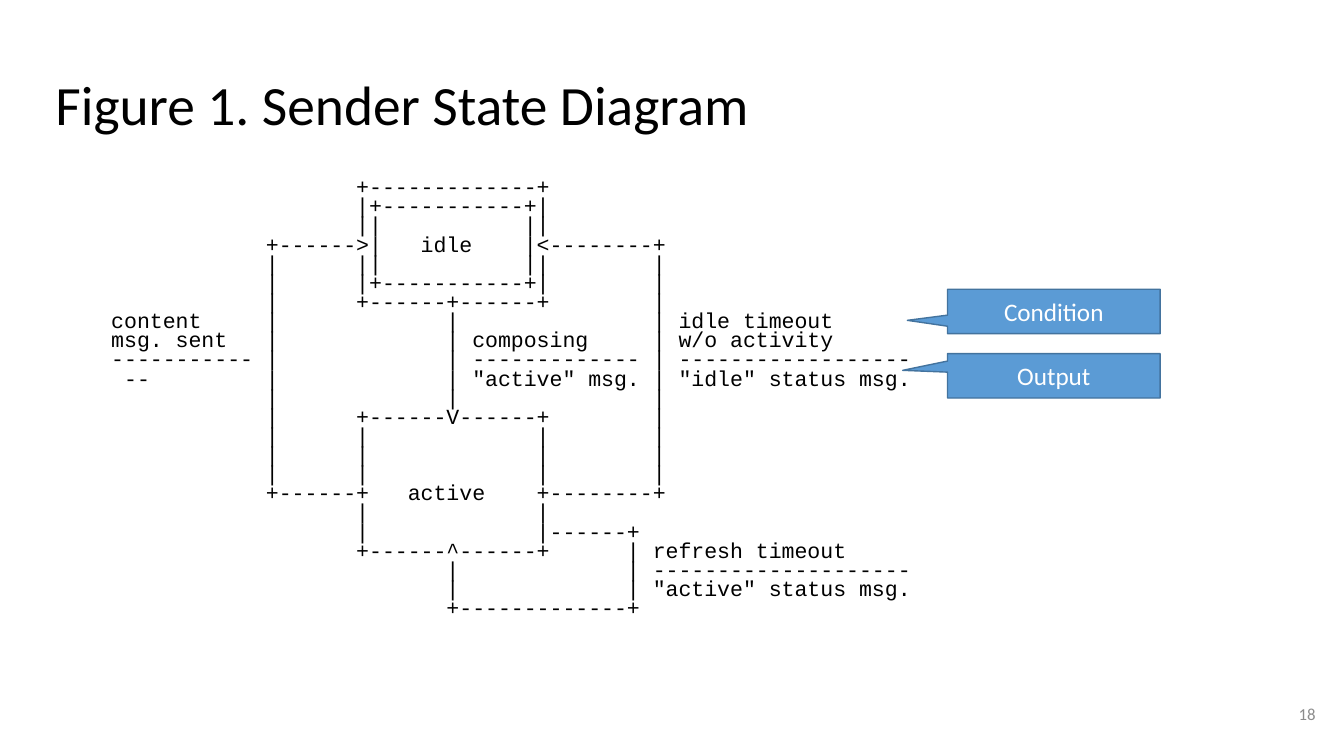
import pptx
import pptx.util
import pptx.oxml
import pptx.dml.color
import pptx.enum.shapes
import pptx.enum.text

Pt = pptx.util.Pt
ALIGN = pptx.enum.text.PP_ALIGN
ANCHOR = pptx.enum.text.MSO_ANCHOR

IDLE_STATE = """\
                      +-------------+
                      |+-----------+|
                      ||           ||
               +------>|   idle    |<--------+
               |      ||           ||        |
               |      |+-----------+|        |
               |      +------+------+        |"""

TRANSITIONS = """\
   content     |             |               | idle timeout
   msg. sent   |             | composing     | w/o activity
   ----------- |             | ------------- | ------------------
    --         |             | "active" msg. | "idle" status msg.
               |             |               |"""

ACTIVE_STATE = """\
               |      +------V------+        |
               |      |             |        |
               |      |             |        |
               |      |             |        |
               +------+   active    +--------+
                      |             |
                      |             |------+
                      +------^------+      | refresh timeout
                             |             | --------------------
                             |             | "active" status msg.
                             +-------------+"""


def colour(code):
    return pptx.dml.color.RGBColor.from_string(code)


def place(shape, box):
    shape.left, shape.top, shape.width, shape.height = [Pt(length) for length in box]


def write(shape, text, font, size, code, align, anchor, spacing=1.0):
    frame = shape.text_frame
    frame.text = text
    frame.word_wrap = True
    frame.auto_size = pptx.enum.text.MSO_AUTO_SIZE.NONE
    frame.vertical_anchor = anchor
    frame.margin_left = frame.margin_right = Pt(7.2)
    frame.margin_top = frame.margin_bottom = Pt(7.2)
    for para in frame.paragraphs:
        para.alignment = align
        para.line_spacing = spacing
        para.space_before = para.space_after = Pt(0)
        for span in para.runs:
            span.font.name = font
            span.font.size = Pt(size)
            span.font.color.rgb = colour(code)


def add_title(page, box):
    title = page.shapes.title
    place(title, box)
    write(title, "Figure 1. Sender State Diagram", "Calibri", 39.6, "000000",
          ALIGN.LEFT, ANCHOR.MIDDLE, 0.9)


def add_diagram(page, box):
    body = page.placeholders[1]
    place(body, box)
    diagram = "\n".join([IDLE_STATE, TRANSITIONS, ACTIVE_STATE])
    write(body, diagram, "Courier New", 15.4, "000000", ALIGN.LEFT, ANCHOR.TOP, 0.74)
    for para in body.text_frame.paragraphs:
        properties = para._p.get_or_add_pPr()
        properties.set("marL", str(Pt(12.24)))
        properties.set("indent", "0")
        bullet = pptx.oxml.parse_xml(
            '<a:buNone xmlns:a="http://schemas.openxmlformats.org/drawingml/2006/main"/>')
        properties.append(bullet)


def add_callouts(page, box):
    left, top, width, height = box
    pitch = 46
    callouts = [("Condition", -0.689, 0.201), ("Output", -0.711, -0.124)]
    for index, (label, tip_x, tip_y) in enumerate(callouts):
        callout = page.shapes.add_shape(
            pptx.enum.shapes.MSO_SHAPE.RECTANGULAR_CALLOUT,
            Pt(left), Pt(top + index * pitch), Pt(width), Pt(height))
        callout.adjustments[0] = tip_x
        callout.adjustments[1] = tip_y
        callout.shadow.inherit = False
        callout.fill.solid()
        callout.fill.fore_color.rgb = colour("5B9BD5")
        callout.line.color.rgb = colour("43739E")
        callout.line.width = Pt(1)
        write(callout, label, "Calibri", 18, "FFFFFF", ALIGN.CENTER, ANCHOR.MIDDLE)


def add_page_number(page, box):
    number = page.shapes.add_textbox(*[Pt(length) for length in box])
    write(number, "18", "Calibri", 12, "8C8C8C", ALIGN.RIGHT, ANCHOR.MIDDLE)


def main():
    deck = pptx.Presentation()
    deck.slide_width, deck.slide_height = Pt(960), Pt(540)
    page = deck.slides.add_slide(deck.slide_layouts[1])
    add_title(page, (32.4, 46.8, 894.24, 60.48))
    add_diagram(page, (32.4, 120.96, 894.24, 358.56))
    add_page_number(page, (889.2, 489.6, 57.6, 41.04))
    add_callouts(page, (676.8, 206.64, 151.92, 31.68))
    deck.save("out.pptx")


if __name__ == "__main__":
    main()
